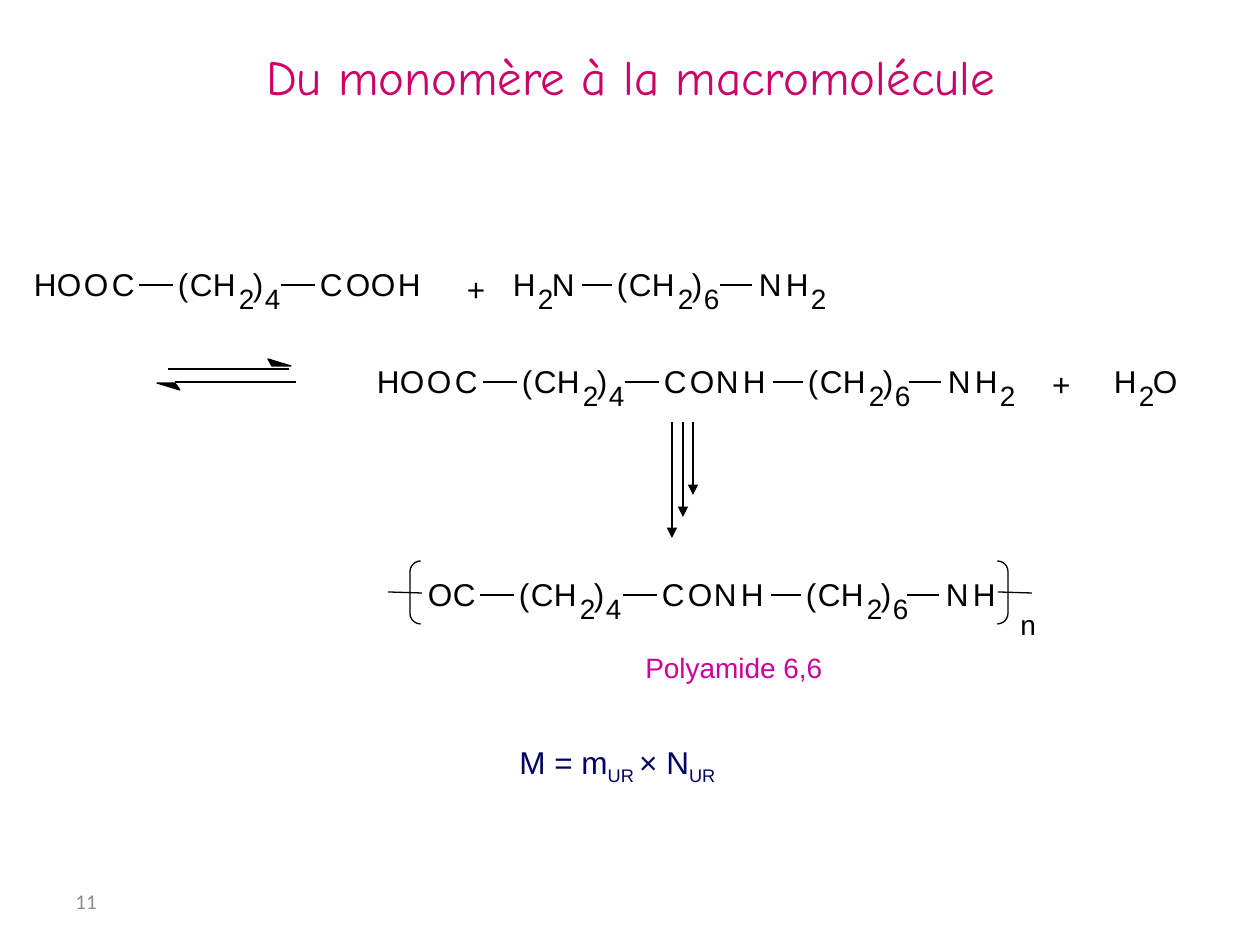
from lxml.etree import SubElement
from pptx import Presentation
from pptx.dml.color import RGBColor
from pptx.enum.shapes import MSO_CONNECTOR as Connector, MSO_SHAPE as Shape
from pptx.enum.text import MSO_ANCHOR as Anchor, MSO_AUTO_SIZE as AutoSize, PP_ALIGN as Align
from pptx.oxml.ns import qn
from pptx.util import Pt

SCALE = 914400 / 126
COLORS = {"ink": "000000", "title": "CC0066", "polymer": "CC0099",
          "mass": "000066", "number": "8C8C8C"}
LINE_WIDTH = Pt(0.75)
BOND_DROP = 20
SUBSCRIPT_DROP = 17

# Left edge of each symbol, counted from the start of its fragment
SYMBOL_OFFSETS = {
    "HOOC": (0, 23, 50, 78),
    "COOH": (0, 26, 51, 78),
    "CONH": (0, 26, 52, 79),
    "(CH2)4": (0, 12, 35, 61, 75, 87),
    "(CH2)6": (0, 12, 35, 61, 75, 87),
    "H2N": (0, 25, 39),
    "H2O": (0, 25, 39),
    "NH2": (0, 27, 52),
    "NH": (0, 27),
    "OC": (0, 25),
    "+": (0,),
}
# Distances from the fragment back to the start and end of the bond before it
BONDS = {"(CH2)4": (39, 5), "COOH": (39, 5), "CONH": (39, 5),
         "(CH2)6": (35, 5), "NH2": (39, 7), "NH": (39, 7)}
SYMBOL_WIDTHS = {"O": 24, "(": 10, ")": 10, "+": 19}

# Top, then (fragment, left) pairs
MOLECULES = [
    (265, [("HOOC", 34), ("(CH2)4", 178), ("COOH", 320)]),
    (270, [("+", 467)]),
    (265, [("H2N", 513), ("(CH2)6", 617), ("NH2", 759)]),
    (362, [("HOOC", 377), ("(CH2)4", 522), ("CONH", 664), ("(CH2)6", 808), ("NH2", 948)]),
    (365, [("+", 1052)]),
    (362, [("H2O", 1114)]),
]
REPEAT_UNIT = (575, [("OC", 428), ("(CH2)4", 519), ("CONH", 662), ("(CH2)6", 806), ("NH", 946)])


def px(length):
    return round(length * SCALE)


def rgb(name):
    return RGBColor.from_string(COLORS[name])


def add_text(shapes, box, spans, size, color, font="Arial", align=None, **frame_format):
    """Add a text box; spans are (text, is_subscript) pairs."""
    frame = shapes.add_textbox(*map(px, box)).text_frame
    settings = {"word_wrap": False, "auto_size": AutoSize.SHAPE_TO_FIT_TEXT, **frame_format}
    for name, value in settings.items():
        setattr(frame, name, value)
    para = frame.paragraphs[0]
    para.alignment = align
    for text, is_subscript in spans:
        span = para.add_run()
        span.text = text
        for name, value in {"size": Pt(size), "name": font}.items():
            setattr(span.font, name, value)
        span.font.color.rgb = rgb(color)
        if is_subscript:
            span.font._element.set("baseline", "-25000")


def add_symbol(shapes, symbol, left, top):
    margins = dict.fromkeys(("margin_left", "margin_top", "margin_right", "margin_bottom"), 0)
    if symbol.isdigit():
        box, size = (left, top + SUBSCRIPT_DROP, 15, 34), 16
    else:
        box, size = (left, top, SYMBOL_WIDTHS.get(symbol, 23), 38), 18
    add_text(shapes, box, [(symbol, False)], size, "ink", **margins)


def add_line(shapes, start, end, arrow=False):
    line = shapes.add_connector(Connector.STRAIGHT, *map(px, (*start, *end)))
    line.line.color.rgb = rgb("ink")
    line.line.width = LINE_WIDTH
    if arrow:
        SubElement(line.line._get_or_add_ln(), qn("a:tailEnd"), type="triangle")
    SubElement(line._element.spPr, qn("a:effectLst"))


def add_molecule(shapes, top, fragments):
    for fragment, left in fragments:
        for symbol, offset in zip(fragment, SYMBOL_OFFSETS[fragment]):
            add_symbol(shapes, symbol, left + offset, top)
        if fragment in BONDS:
            start, end = BONDS[fragment]
            y = top + BOND_DROP
            add_line(shapes, (left - start, y), (left - end, y))


def add_half_arrow(shapes, start, end, barb):
    add_line(shapes, start, end)
    builder = shapes.build_freeform(*barb[0], scale=SCALE)
    builder.add_line_segments(barb[1:], close=True)
    head = builder.convert_to_shape()
    head.shadow.inherit = False
    head.fill.solid()
    head.fill.fore_color.rgb = rgb("ink")
    head.line.color.rgb = rgb("ink")
    head.line.width = LINE_WIDTH


def add_repeat_unit(shapes):
    add_molecule(shapes, *REPEAT_UNIT)
    for left in (388, 998):
        add_line(shapes, (left, 592), (left + 34, 593))
    brackets = shapes.add_shape(Shape.DOUBLE_BRACKET, *map(px, (410, 561, 598, 63)))
    brackets.adjustments[0] = 0.17
    brackets.shadow.inherit = False
    brackets.fill.background()
    brackets.line.color.rgb = rgb("ink")
    brackets.line.width = LINE_WIDTH
    add_text(shapes, (1008, 601, 40, 47), [("n", False)], 16, "ink")


def main():
    deck = Presentation()
    deck.slide_width, deck.slide_height = px(1260), px(945)
    page = deck.slides.add_slide(deck.slide_layouts[6])
    shapes = page.shapes

    fixed = {"word_wrap": True, "auto_size": AutoSize.NONE, "vertical_anchor": Anchor.MIDDLE}
    add_text(shapes, (95, 37, 1071, 78), [("Du monomère à la macromolécule", False)],
             28, "title", "Comic Neue", Align.CENTER, **fixed)
    add_text(shapes, (63, 876, 294, 50), [("11", False)], 12, "number", "Calibri", **fixed)

    for top, fragments in MOLECULES:
        add_molecule(shapes.add_group_shape().shapes, top, fragments)

    equilibrium = shapes.add_group_shape().shapes
    add_half_arrow(equilibrium, (168, 369), (289, 369), [(291, 366), (272, 366), (268, 359)])
    add_half_arrow(equilibrium, (296, 382), (175, 382), [(157, 383), (175, 383), (180, 390)])

    steps = shapes.add_group_shape().shapes
    for x, bottom in ((672, 538), (683, 517), (693, 495)):
        add_line(steps, (x, 422), (x, bottom), arrow=True)

    add_repeat_unit(shapes.add_group_shape().shapes)
    add_text(shapes, (633, 644, 203, 47), [("Polyamide 6,6", False)], 16, "polymer")
    add_text(shapes, (507, 737, 249, 50),
             [("M = m", False), ("UR ", True), ("× N", False), ("UR", True)], 18, "mass")
    deck.save("out.pptx")


if __name__ == "__main__":
    main()
